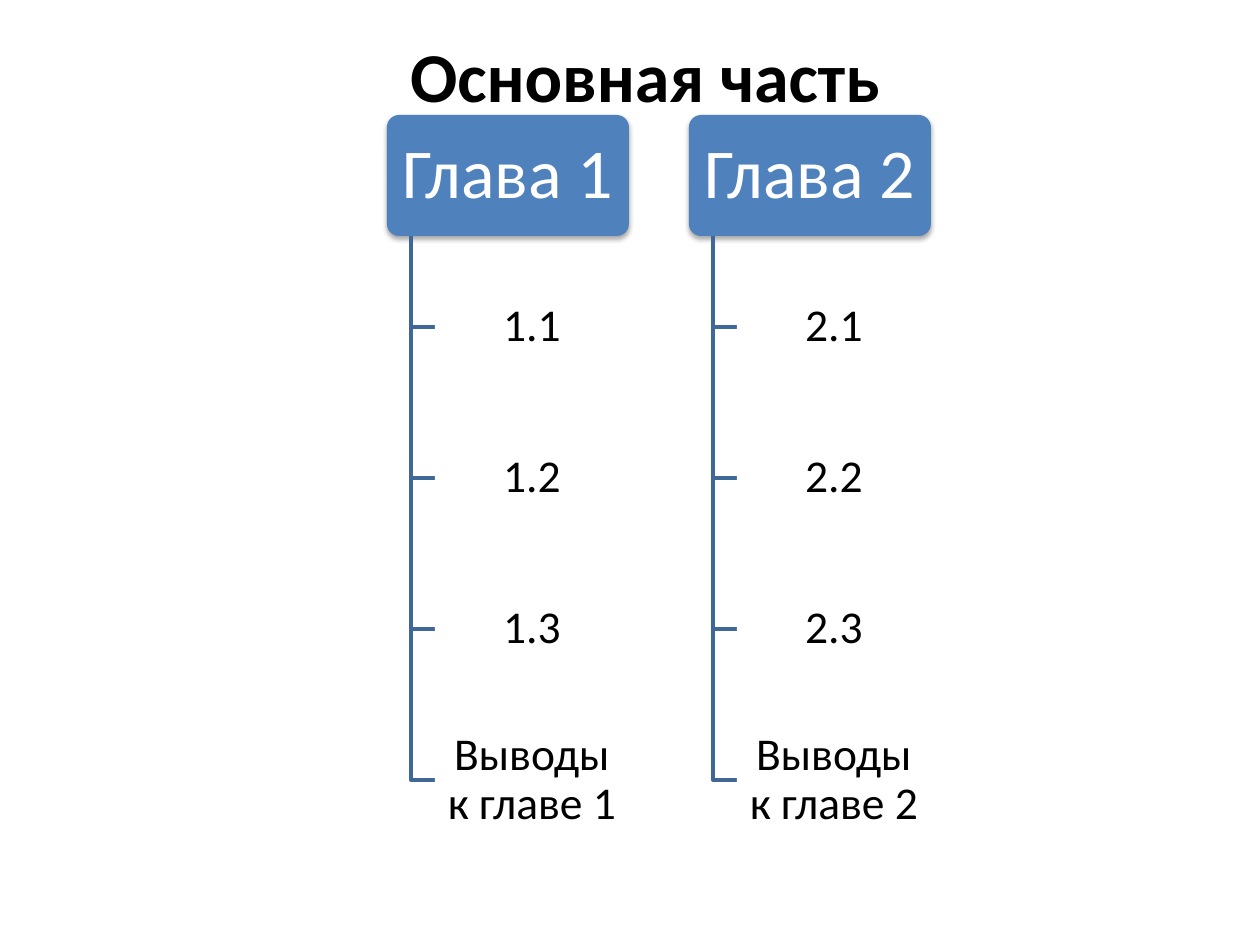
from dataclasses import dataclass

from lxml.etree import SubElement
from pptx import Presentation
from pptx.dml.color import RGBColor
from pptx.enum.shapes import MSO_SHAPE as Shape
from pptx.enum.text import MSO_ANCHOR as Anchor, MSO_AUTO_SIZE as AutoSize, PP_ALIGN as Align
from pptx.oxml.ns import qn
from pptx.util import Pt

SCALE = 914400 / 126


@dataclass(frozen=True)
class Theme:
    """Colours, font and type sizes of the slide."""
    font: str = "Calibri"
    black: RGBColor = RGBColor(0, 0, 0)
    white: RGBColor = RGBColor(255, 255, 255)
    chapter: RGBColor = RGBColor(0x4F, 0x81, 0xBD)
    branch: RGBColor = RGBColor(0x3F, 0x67, 0x97)
    large: int = 40
    small: int = 26
    branch_width: int = 2


THEME = Theme()


def px(length):
    """Turn px into EMU."""
    return round(length * SCALE)


def write(frame, text, size, color, bold=False):
    """Write one centred paragraph in a text frame."""
    frame.word_wrap = True
    para = frame.paragraphs[0]
    para.text = text
    para.alignment = Align.CENTER
    font = para.font
    font.name, font.size, font.bold = THEME.font, Pt(size), bold
    font.color.rgb = color
    return para


def add_title(page, text, left, top, width, height):
    """Place the slide title in its placeholder."""
    title = page.shapes.title
    title.left, title.top, title.width, title.height = map(px, (left, top, width, height))
    frame = title.text_frame
    frame.auto_size = AutoSize.NONE
    frame.vertical_anchor = Anchor.TOP
    write(frame, text, THEME.large, THEME.black, bold=True)


def add_card(page, text, left, top, width, height, fill, size, color, inset):
    """Draw a rounded card with its label."""
    card = page.shapes.add_shape(Shape.ROUNDED_RECTANGLE, *map(px, (left, top, width, height)))
    card.adjustments[0] = 0.1
    card.shadow.inherit = False
    card.fill.solid()
    card.fill.fore_color.rgb = fill
    card.line.fill.background()
    frame = card.text_frame
    frame.vertical_anchor = Anchor.MIDDLE
    frame.margin_left = frame.margin_right = px(inset)
    frame.margin_top = frame.margin_bottom = px(inset - 2)
    write(frame, text, size, color).line_spacing = 0.9
    return card


def add_shadow(card):
    """Give a card a soft shadow below it."""
    effects = card._element.spPr.find(qn("a:effectLst"))
    shadow = SubElement(effects, qn("a:outerShdw"), blurRad=str(Pt(3.1)), dist=str(Pt(1.8)),
                        dir="5400000", rotWithShape="0")
    black = SubElement(shadow, qn("a:srgbClr"), val=str(THEME.black))
    SubElement(black, qn("a:alpha"), val="35000")


def set_opacity(card, percent):
    """Make the solid fill of a card partly transparent."""
    color = card._element.spPr.find(qn("a:solidFill"))[0]
    SubElement(color, qn("a:alpha"), val=str(percent * 1000))


def add_branch(page, left, top, right, bottom):
    """Draw an elbow line down and then to the right."""
    builder = page.shapes.build_freeform(left, top, scale=SCALE)
    builder.add_line_segments([(left, bottom), (right, bottom)], close=False)
    branch = builder.convert_to_shape()
    branch.shadow.inherit = False
    branch.fill.background()
    branch.line.color.rgb = THEME.branch
    branch.line.width = Pt(THEME.branch_width)


def add_chapter(page, name, sections, left, top, width, height):
    """Draw a chapter card with its sections hanging below."""
    indent = width // 10
    pitch = height * 5 / 4
    chapter = add_card(page, name, left, top, width, height,
                       THEME.chapter, THEME.large, THEME.white, inset=10)
    add_shadow(chapter)
    for row, section in enumerate(sections, start=1):
        section_top = top + row * pitch
        section_left = left + 2 * indent
        add_branch(page, left + indent, top + height, section_left, section_top + height / 2)
        card = add_card(page, section, section_left, section_top, width - 2 * indent, height,
                        THEME.white, THEME.small, THEME.black, inset=6)
        set_opacity(card, 90)


def main():
    """Build the slide and save it."""
    deck = Presentation()
    deck.slide_width, deck.slide_height = px(1260), px(945)
    page = deck.slides.add_slide(deck.slide_layouts[5])
    add_title(page, "Основная часть", 74, 26, 1142, 108)
    for number, left in ((1, 387), (2, 689)):
        sections = [f"{number}.{part}" for part in (1, 2, 3)]
        sections.append(f"Выводы к главе {number}")
        add_chapter(page, f"Глава {number}", sections, left, 115, 242, 121)
    deck.save("out.pptx")


if __name__ == "__main__":
    main()
